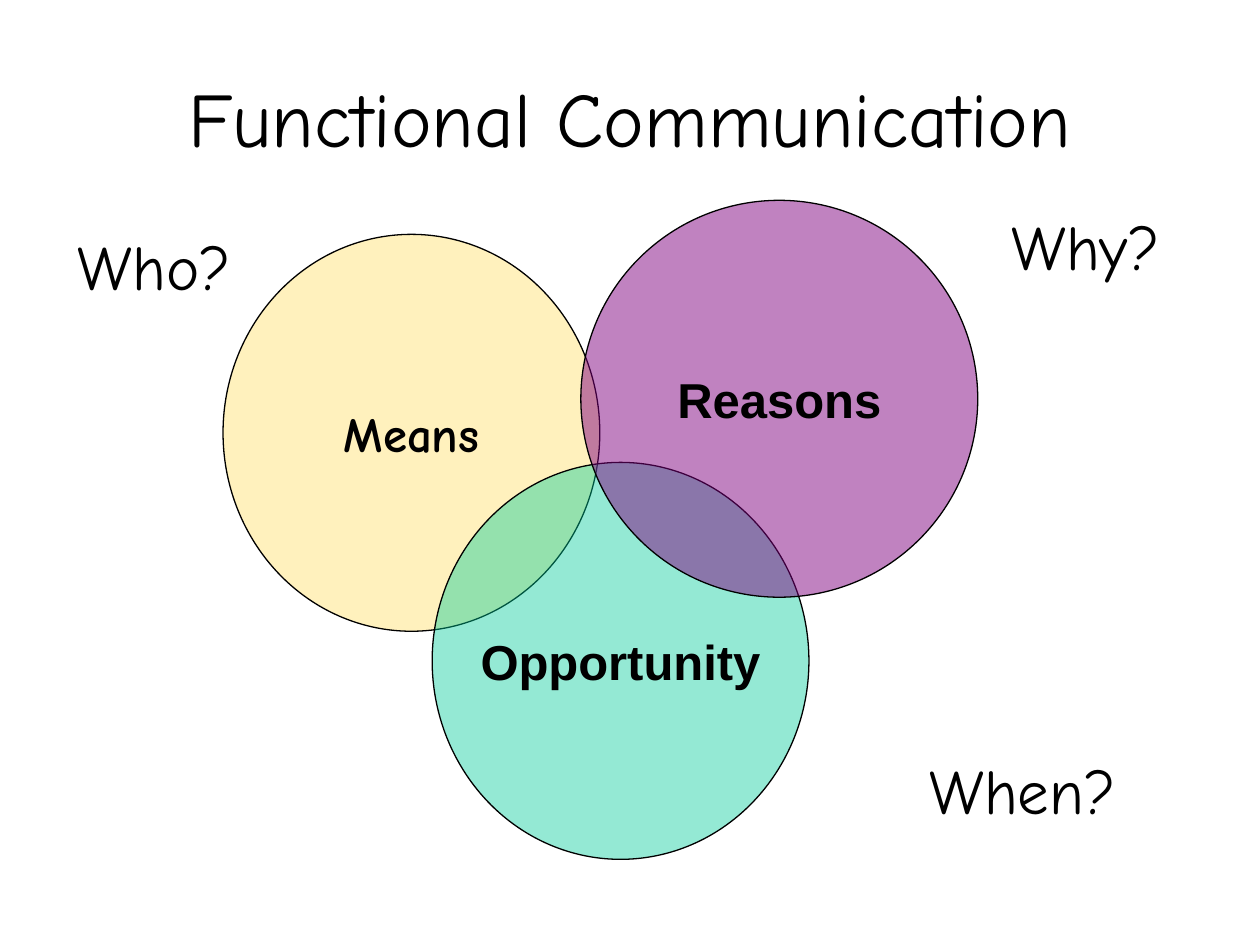
from lxml import etree
from pptx import Presentation
from pptx.dml.color import RGBColor
from pptx.enum import shapes, text
from pptx.oxml.ns import qn
from pptx.util import Inches, Pt

HAND, SANS = "Comic Neue", "Arial"
BLACK = "000000"
HIGH = 3.15

# words, left, top, width, height, size, alignment
TITLE = ("Functional Communication", 0.5, 0.3, 9, 1.25, 44, text.PP_ALIGN.CENTER)
ASKS = [
    ("Why?", 7.93, 1.59, 1.57),
    ("Who?", 0.52, 1.75, 1.57),
    ("When?", 7.28, 5.91, 1.89),
]
# words, left, top, width, fill, opacity in percent, font
CIRCLES = [
    ("Means", 1.77, 1.86, 2.99, "FFCC00", 26, HAND),
    ("Opportunity", 3.43, 3.67, 2.99, "00CC99", 42, SANS),
    ("Reasons", 4.61, 1.59, HIGH, "800080", 49, SANS),
]


def color(code):
    return RGBColor.from_string(code)


def write(shape, words, size, font, align, bold=False, wrap=True):
    frame = shape.text_frame
    frame.word_wrap = wrap
    frame.vertical_anchor = text.MSO_ANCHOR.MIDDLE
    para = frame.paragraphs[0]
    para.text = words
    para.alignment = align
    para.font.size = Pt(size)
    para.font.name = font
    para.font.bold = bold
    para.font.color.rgb = color(BLACK)


def add_label(slide, words, left, top, width, height=0.71, size=36,
              align=text.PP_ALIGN.LEFT):
    box = slide.shapes.add_textbox(*map(Inches, (left, top, width, height)))
    write(box, words, size, HAND, align)


def add_circle(slide, words, left, top, width, fill, alpha, font):
    oval = slide.shapes.add_shape(
        shapes.MSO_SHAPE.OVAL, *map(Inches, (left, top, width, HIGH)))
    oval.shadow.inherit = False
    oval.fill.solid()
    oval.fill.fore_color.rgb = color(fill)
    tint = oval.fill._xPr.find(qn("a:solidFill"))[0]
    etree.SubElement(tint, qn("a:alpha")).set("val", str(alpha * 1000))
    oval.line.color.rgb = color(BLACK)
    oval.line.width = Pt(0.75)
    write(oval, words, 28, font, text.PP_ALIGN.CENTER, bold=True, wrap=False)


def main():
    deck = Presentation()
    deck.slide_width, deck.slide_height = Inches(10), Inches(7.5)
    slide = deck.slides.add_slide(deck.slide_layouts[6])
    add_label(slide, *TITLE)
    for circle in CIRCLES:
        add_circle(slide, *circle)
    for ask in ASKS:
        add_label(slide, *ask)
    deck.save("out.pptx")


if __name__ == "__main__":
    main()
